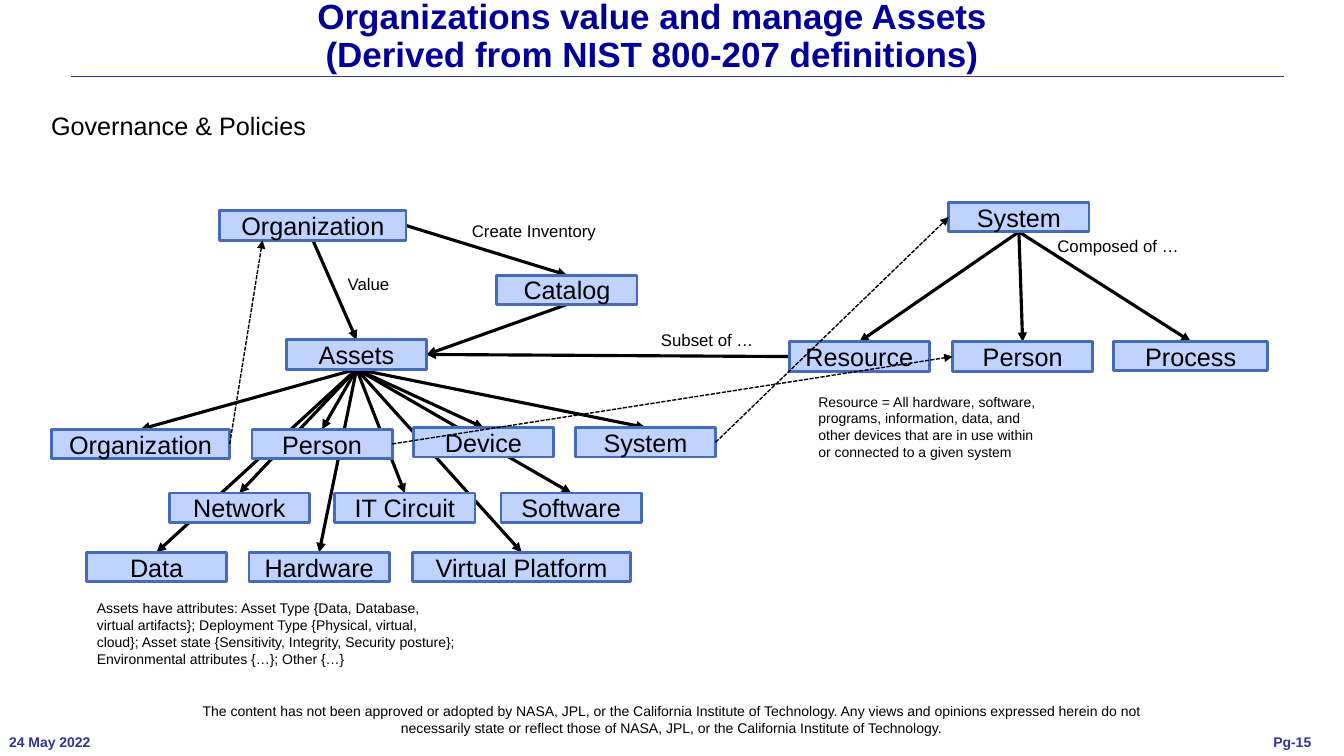
"""Build the slide on how organizations value and manage assets."""
from dataclasses import dataclass
from typing import Optional

from lxml.etree import SubElement
from pptx import Presentation
from pptx.dml.color import RGBColor
from pptx.enum.dml import MSO_LINE
from pptx.enum.shapes import MSO_CONNECTOR, MSO_SHAPE
from pptx.enum.text import MSO_ANCHOR, PP_ALIGN
from pptx.oxml.ns import qn
from pptx.shapes.autoshape import Shape
from pptx.shapes.connector import Connector
from pptx.slide import Slide
from pptx.text.text import _Paragraph as Paragraph
from pptx.util import Inches, Length, Pt

COLUMNS, ROWS = 160, 90
WIDTH, HEIGHT = Inches(13.33), Inches(7.5)
TOP, LEFT, BOTTOM, RIGHT = range(4)


@dataclass(frozen=True)
class Theme:
    """Colours, font and type sizes of the slide."""
    font: str = "Arial"
    ink: RGBColor = RGBColor(0, 0, 0)
    title: RGBColor = RGBColor(0x00, 0x00, 0x99)
    footer: RGBColor = RGBColor(0x33, 0x33, 0x99)
    fill: RGBColor = RGBColor(0xC0, 0xD2, 0xFE)
    outline: RGBColor = RGBColor(0x48, 0x6A, 0xBB)
    title_size: float = 25
    box_size: float = 18
    label_size: float = 12
    note_size: float = 10


THEME = Theme()


@dataclass(frozen=True)
class Entity:
    """A named box placed on the grid."""
    key: str
    text: str
    column: float
    row: float
    columns: float = 16.7
    rows: float = 3.5


@dataclass(frozen=True)
class Link:
    """An arrow between the sides of two entities."""
    source: str
    target: str
    source_side: int = BOTTOM
    target_side: int = TOP
    dashed: bool = False
    target_share: Optional[float] = None


@dataclass(frozen=True)
class Caption:
    """Free text placed on the grid."""
    text: str
    column: float
    row: float
    columns: float
    rows: float
    size: float = THEME.note_size
    align: PP_ALIGN = PP_ALIGN.LEFT
    footer: bool = False


ASSET_KINDS = [
    Entity("organization asset", "Organization", 6.1, 51.1, 21.25),
    Entity("person asset", "Person", 30, 51.1),
    Entity("device", "Device", 49.2, 50.9),
    Entity("system asset", "System", 68.5, 50.9),
    Entity("network", "Network", 20.15, 58.7),
    Entity("circuit", "IT Circuit", 39.85, 58.7),
    Entity("software", "Software", 59.65, 58.7),
    Entity("data", "Data", 10.3, 65.75),
    Entity("hardware", "Hardware", 29.65, 65.75),
    Entity("platform", "Virtual Platform", 49.1, 65.75, 26),
]
SYSTEM_PARTS = [
    Entity("resource", "Resource", 93.95, 40.7),
    Entity("person", "Person", 113.4, 40.7),
    Entity("process", "Process", 132.6, 40.65, 18.3),
]
ENTITIES = [
    Entity("organization", "Organization", 26.15, 25.1, 22.2),
    Entity("catalog", "Catalog", 59.15, 32.75),
    Entity("assets", "Assets", 34.1, 40.45),
    Entity("system", "System", 112.95, 24.1),
    *SYSTEM_PARTS,
    *ASSET_KINDS,
]
LINKS = [
    Link("organization", "assets"),
    Link("organization", "catalog", RIGHT),
    Link("catalog", "assets", BOTTOM, RIGHT),
    Link("resource", "assets", LEFT, RIGHT),
    *(Link("assets", kind.key) for kind in ASSET_KINDS),
    *(Link("system", part.key) for part in SYSTEM_PARTS),
    Link("system asset", "system", RIGHT, LEFT, dashed=True),
    Link("organization asset", "organization", RIGHT, BOTTOM, True, 0.23),
    Link("person asset", "person", RIGHT, LEFT, dashed=True),
]
CAPTIONS = [
    Caption("Governance & Policies", 4.9, 12.5, 80.9, 4.8, THEME.box_size),
    Caption("Value", 40.2, 32.05, 12.8, 3.6, THEME.label_size),
    Caption("Create Inventory", 55, 25.65, 21.5, 3.6, THEME.label_size),
    Caption("Subset of …", 77.5, 38.65, 15.6, 3.6, THEME.label_size),
    Caption("Composed of …", 124.7, 27.45, 20.9, 3.6, THEME.label_size),
    Caption("Resource = All hardware, software, programs, information, data, and other "
            "devices that are in use within or connected to a given system",
            96.25, 46.2, 29.75, 9.25),
    Caption("Assets have attributes: Asset Type {Data, Database, virtual artifacts}; "
            "Deployment Type {Physical, virtual, cloud}; Asset state {Sensitivity, "
            "Integrity, Security posture}; Environmental attributes {…}; Other {…}",
            10.35, 70.8, 45, 9.25),
    Caption("The content has not been approved or adopted by NASA, JPL, or the California "
            "Institute of Technology. Any views and opinions expressed herein do not "
            "necessarily state or reflect those of NASA, JPL, or the California Institute "
            "of Technology.", 18.95, 83.05, 121.9, 6.95, align=PP_ALIGN.CENTER),
    Caption("24 May 2022", 0, 86.85, 11.9, 3.1, footer=True),
    Caption("Pg-15", 150.5, 86.85, 7, 3.1, footer=True),
]


def across(columns: float) -> Length:
    """Turn grid columns into a length."""
    return Length(round(WIDTH * columns / COLUMNS))


def down(rows: float) -> Length:
    """Turn grid rows into a length."""
    return Length(round(HEIGHT * rows / ROWS))


def add_span(para: Paragraph, text: str, size: float,
             color: RGBColor = THEME.ink, bold: bool = False) -> None:
    """Append one formatted run to a paragraph."""
    span = para.add_run()
    span.text = text
    span.font.name, span.font.size, span.font.bold = THEME.font, Pt(size), bold
    span.font.color.rgb = color


def add_title(page: Slide, lines: list[str]) -> None:
    """Place and fill the title placeholder."""
    title = page.shapes.title
    title.left, title.top = across(3.1), down(-0.7)
    title.width, title.height = across(149), down(11.65)
    title.text_frame.vertical_anchor = MSO_ANCHOR.TOP
    para = title.text_frame.paragraphs[0]
    para.alignment, para.line_spacing = PP_ALIGN.CENTER, 0.9
    for index, line in enumerate(lines):
        if index:
            para.add_line_break()
        add_span(para, line, THEME.title_size, THEME.title, True)


def add_entity(page: Slide, entity: Entity) -> Shape:
    """Draw one entity box."""
    box = page.shapes.add_shape(MSO_SHAPE.RECTANGLE, across(entity.column), down(entity.row),
                                across(entity.columns), down(entity.rows))
    box.shadow.inherit = False
    box.fill.solid()
    box.fill.fore_color.rgb = THEME.fill
    box.line.color.rgb, box.line.width = THEME.outline, Pt(2)
    box.text_frame.vertical_anchor = MSO_ANCHOR.MIDDLE
    para = box.text_frame.paragraphs[0]
    para.alignment = PP_ALIGN.CENTER
    add_span(para, entity.text, THEME.box_size)
    return box


def add_line(page: Slide, color: RGBColor, width: float) -> Connector:
    """Add a shadowless straight line along the title rule."""
    line = page.shapes.add_connector(MSO_CONNECTOR.STRAIGHT, across(8.5), down(9),
                                     across(152.8), down(9))
    line.line.color.rgb, line.line.width = color, Pt(width)
    SubElement(line._element.spPr, qn("a:effectLst"))
    return line


def add_link(page: Slide, link: Link, boxes: dict[str, Shape]) -> None:
    """Join two boxes with an arrow, solid ones behind the boxes."""
    target = boxes[link.target]
    arrow = add_line(page, THEME.ink, 1 if link.dashed else 2.25)
    arrow.begin_connect(boxes[link.source], link.source_side)
    if link.target_share is None:
        arrow.end_connect(target, link.target_side)
    else:
        arrow.end_x = target.left + round(target.width * link.target_share)
        arrow.end_y = target.top + target.height
    if link.dashed:
        arrow.line.dash_style = MSO_LINE.SQUARE_DOT
    else:
        next(iter(boxes.values()))._element.addprevious(arrow._element)
    SubElement(arrow.line._get_or_add_ln(), qn("a:tailEnd"), type="triangle")


def add_caption(page: Slide, caption: Caption) -> None:
    """Write one caption."""
    box = page.shapes.add_textbox(across(caption.column), down(caption.row),
                                  across(caption.columns), down(caption.rows))
    frame = box.text_frame
    frame.word_wrap = not caption.footer
    if caption.footer:
        frame.margin_left = frame.margin_right = Inches(0.09)
        frame.margin_top = frame.margin_bottom = Inches(0.04)
    para = frame.paragraphs[0]
    para.alignment = caption.align
    color = THEME.footer if caption.footer else THEME.ink
    add_span(para, caption.text, caption.size, color, caption.footer)


def main() -> None:
    """Build and save the deck."""
    deck = Presentation()
    deck.slide_width, deck.slide_height = WIDTH, HEIGHT
    page = deck.slides.add_slide(deck.slide_layouts[5])
    add_line(page, THEME.footer, 0.13)
    add_title(page, ["Organizations value and manage Assets",
                     "(Derived from NIST 800-207 definitions)"])
    boxes = {entity.key: add_entity(page, entity) for entity in ENTITIES}
    for link in LINKS:
        add_link(page, link, boxes)
    for caption in CAPTIONS:
        add_caption(page, caption)
    deck.save("out.pptx")


if __name__ == "__main__":
    main()
